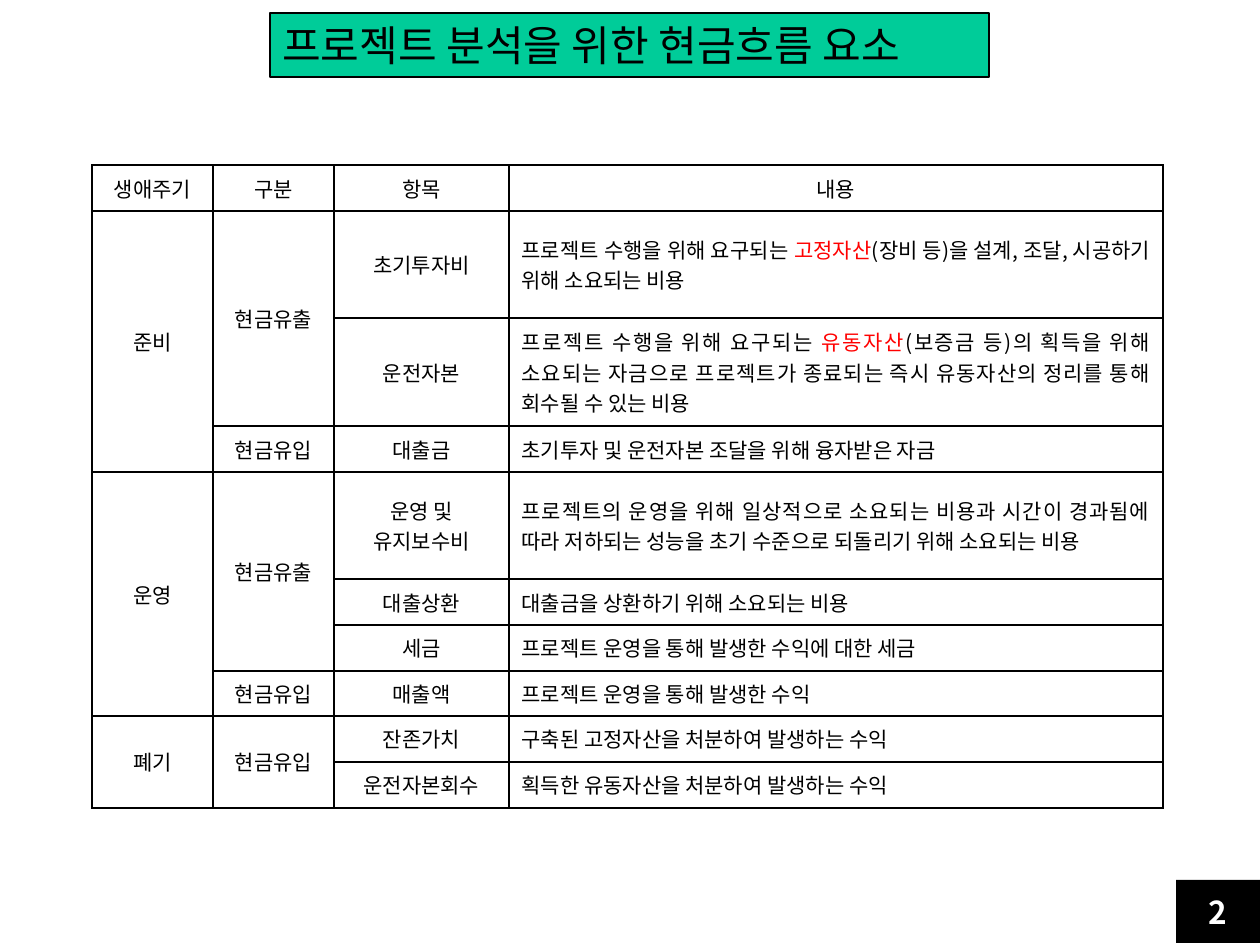
from dataclasses import dataclass
from itertools import pairwise

from lxml.etree import SubElement
from pptx import Presentation
from pptx.dml.color import RGBColor
from pptx.enum.shapes import MSO_SHAPE
from pptx.enum.text import MSO_ANCHOR, PP_ALIGN
from pptx.oxml.ns import qn
from pptx.slide import Slide
from pptx.table import Table, _Cell as Cell
from pptx.text.text import TextFrame
from pptx.util import Pt

EMU_PER_PX = 914400 / 126
FONT = "Noto Sans CJK KR"
BLACK, WHITE, RED, GREEN = "000000", "FFFFFF", "FF0000", "00CC99"
HEADINGS = ("생애주기", "구분", "항목", "내용")
COLUMN_EDGES = (92, 213, 334, 509, 1163)
ROW_EDGES = (165, 211, 318, 426, 472, 579, 625, 671, 716, 762, 808)


@dataclass(frozen=True)
class Item:
    name: str
    description: str
    highlight: str = ""


@dataclass(frozen=True)
class Span:
    label: str
    column: int
    first_row: int
    last_row: int


@dataclass(frozen=True)
class Box:
    text: str
    left: int
    top: int
    width: int
    height: int
    fill: str
    line: str
    color: str
    size: int
    alignment: PP_ALIGN
    bold: bool = False


ITEMS = (
    Item("초기투자비", "프로젝트 수행을 위해 요구되는 고정자산(장비 등)을 설계, 조달, "
         "시공하기 위해 소요되는 비용", "고정자산"),
    Item("운전자본", "프로젝트 수행을 위해 요구되는 유동자산(보증금 등)의 획득을 위해 "
         "소요되는 자금으로 프로젝트가 종료되는 즉시 유동자산의 정리를 통해 "
         "회수될 수 있는 비용", "유동자산"),
    Item("대출금", "초기투자 및 운전자본 조달을 위해 융자받은 자금"),
    Item("운영 및 유지보수비", "프로젝트의 운영을 위해 일상적으로 소요되는 비용과 시간이 "
         "경과됨에 따라 저하되는 성능을 초기 수준으로 되돌리기 위해 소요되는 비용"),
    Item("대출상환", "대출금을 상환하기 위해 소요되는 비용"),
    Item("세금", "프로젝트 운영을 통해 발생한 수익에 대한 세금"),
    Item("매출액", "프로젝트 운영을 통해 발생한 수익"),
    Item("잔존가치", "구축된 고정자산을 처분하여 발생하는 수익"),
    Item("운전자본회수", "획득한 유동자산을 처분하여 발생하는 수익"),
)
SPANS = (
    Span("준비", 0, 1, 3),
    Span("운영", 0, 4, 7),
    Span("폐기", 0, 8, 9),
    Span("현금유출", 1, 1, 2),
    Span("현금유입", 1, 3, 3),
    Span("현금유출", 1, 4, 6),
    Span("현금유입", 1, 7, 7),
    Span("현금유입", 1, 8, 9),
)
BOXES = (
    Box("프로젝트 분석을 위한 현금흐름 요소", 270, 13, 719, 64,
        GREEN, BLACK, BLACK, 24, PP_ALIGN.LEFT),
    Box("2", 1176, 880, 84, 63, BLACK, "", WHITE, 18, PP_ALIGN.CENTER, True),
)


def px(length: int) -> int:
    return round(length * EMU_PER_PX)


def rgb(color: str) -> RGBColor:
    return RGBColor.from_string(color)


def write(frame: TextFrame, text: str, size: int, color: str,
          alignment: PP_ALIGN, bold: bool = False, highlight: str = "") -> None:
    """Write one paragraph, with the highlighted word in red."""
    paragraph = frame.paragraphs[0]
    paragraph.alignment = alignment
    font = paragraph.font
    font.name, font.size, font.bold = FONT, Pt(size), bold
    font.color.rgb = rgb(color)
    defaults = paragraph._p.pPr.find(qn("a:defRPr"))
    SubElement(defaults, qn("a:ea"), typeface=FONT)
    parts = text.partition(highlight) if highlight else (text,)
    for part in parts:
        run = paragraph.add_run()
        run.text = part
        if part == highlight:
            run.font.color.rgb = rgb(RED)


def add_borders(cell: Cell) -> None:
    properties = cell._tc.get_or_add_tcPr()
    for index, side in enumerate(("lnL", "lnR", "lnT", "lnB")):
        border = properties.makeelement(qn(f"a:{side}"), {"w": str(Pt(1))})
        fill = SubElement(border, qn("a:solidFill"))
        SubElement(fill, qn("a:srgbClr"), val=BLACK)
        properties.insert(index, border)


def write_cell(cell: Cell, text: str, alignment: PP_ALIGN = PP_ALIGN.CENTER,
               highlight: str = "") -> None:
    cell.vertical_anchor = MSO_ANCHOR.MIDDLE
    write(cell.text_frame, text, 12, BLACK, alignment, highlight=highlight)


def add_cash_flow_table(slide: Slide) -> Table:
    left, right = COLUMN_EDGES[0], COLUMN_EDGES[-1]
    top, bottom = ROW_EDGES[0], ROW_EDGES[-1]
    table = slide.shapes.add_table(
        len(ROW_EDGES) - 1, len(HEADINGS),
        px(left), px(top), px(right - left), px(bottom - top)).table
    table.first_row = table.horz_banding = False
    for column, (start, end) in zip(table.columns, pairwise(COLUMN_EDGES)):
        column.width = px(end - start)
    for row, (start, end) in zip(table.rows, pairwise(ROW_EDGES)):
        row.height = px(end - start)
    for cell in table.iter_cells():
        cell.fill.background()
        add_borders(cell)

    for column, heading in enumerate(HEADINGS):
        write_cell(table.cell(0, column), heading)
    for row, item in enumerate(ITEMS, start=1):
        write_cell(table.cell(row, 2), item.name)
        write_cell(table.cell(row, 3), item.description, PP_ALIGN.JUSTIFY, item.highlight)
    for span in SPANS:
        cell = table.cell(span.first_row, span.column)
        if span.last_row > span.first_row:
            cell.merge(table.cell(span.last_row, span.column))
        write_cell(cell, span.label)
    return table


def add_box(slide: Slide, box: Box) -> None:
    shape = slide.shapes.add_shape(
        MSO_SHAPE.RECTANGLE, px(box.left), px(box.top), px(box.width), px(box.height))
    shape.shadow.inherit = False
    shape.fill.solid()
    shape.fill.fore_color.rgb = rgb(box.fill)
    if box.line:
        shape.line.color.rgb = rgb(box.line)
        shape.line.width = Pt(0.75)
    else:
        shape.line.fill.background()
    frame = shape.text_frame
    frame.word_wrap = True
    frame.vertical_anchor = MSO_ANCHOR.MIDDLE
    write(frame, box.text, box.size, box.color, box.alignment, box.bold)


def main() -> None:
    presentation = Presentation()
    presentation.slide_width, presentation.slide_height = px(1260), px(945)
    slide = presentation.slides.add_slide(presentation.slide_layouts[6])
    add_cash_flow_table(slide)
    for box in BOXES:
        add_box(slide, box)
    presentation.save("out.pptx")


if __name__ == "__main__":
    main()
